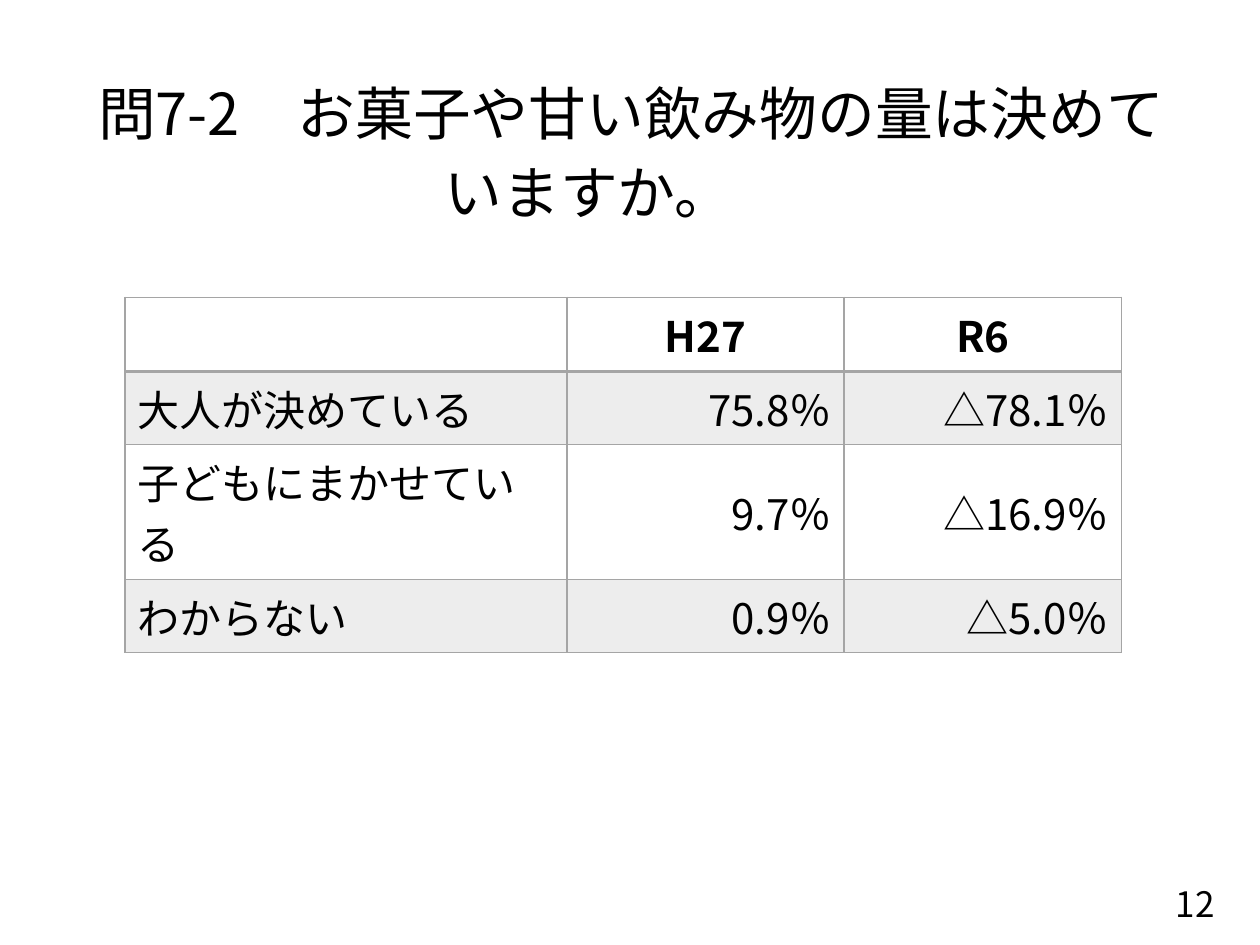
import pptx
import pptx.util
import pptx.dml.color
import pptx.enum.text
import pptx.oxml.ns
import lxml.etree

Inches = pptx.util.Inches
Pt = pptx.util.Pt
ALIGN = pptx.enum.text.PP_ALIGN
MIDDLE = pptx.enum.text.MSO_ANCHOR.MIDDLE
qn = pptx.oxml.ns.qn
BLACK = pptx.dml.color.RGBColor(0x00, 0x00, 0x00)
GRAY = pptx.dml.color.RGBColor(0xA5, 0xA5, 0xA5)
FONT = "Noto Sans CJK JP"


def write(frame, text, size=24, bold=False, align=ALIGN.LEFT):
    frame.word_wrap = True
    paragraph = frame.paragraphs[0]
    paragraph.text = text
    paragraph.alignment = align
    for run in paragraph.runs:
        run.font.name = FONT
        run.font.size = Pt(size)
        run.font.bold = bold
        run.font.color.rgb = BLACK
        east_asian = lxml.etree.SubElement(run.font._element, qn("a:ea"))
        east_asian.set("typeface", FONT)
    return paragraph


def draw_borders(cell, widths):
    properties = cell._tc.get_or_add_tcPr()
    for side, width in zip("LRTB", widths):
        line = lxml.etree.SubElement(properties, qn(f"a:ln{side}"), w=str(Pt(width)))
        fill = lxml.etree.SubElement(line, qn("a:solidFill"))
        lxml.etree.SubElement(fill, qn("a:srgbClr"), val=str(GRAY))


deck = pptx.Presentation()
deck.slide_width = Inches(10)
deck.slide_height = Inches(7.5)
slide = deck.slides.add_slide(deck.slide_layouts[6])

page_number = slide.shapes.add_textbox(Inches(7.49), Inches(6.97), Inches(2.25), Inches(0.4))
page_number.text_frame.vertical_anchor = MIDDLE
write(page_number.text_frame, "12", size=20, align=ALIGN.RIGHT)

question = slide.shapes.add_textbox(Inches(0.22), Inches(0.44), Inches(10.11), Inches(1.45))
question.text_frame.vertical_anchor = MIDDLE
heading = write(question.text_frame, "問7-2　お菓子や甘い飲み物の量は決めて\vいますか。", size=33)
heading.line_spacing = Pt(45)
heading_format = heading._p.get_or_add_pPr()
heading_format.set("marL", str(Inches(3.21)))
heading_format.set("indent", str(Inches(-2.75)))

answers = [
    ("", "H27", "R6"),
    ("大人が決めている", "75.8％", "△78.1％"),
    ("子どもにまかせている", "9.7％", "△16.9％"),
    ("わからない", "0.9％", "△5.0％"),
]
row_heights = (0.59, 0.58, 1.07, 0.58)
column_widths = (3.51, 2.2, 2.2)
results = slide.shapes.add_table(
    4, 3, Inches(0.99), Inches(2.36), Inches(sum(column_widths)), Inches(sum(row_heights))
).table
results.first_row = False
results.horz_banding = False
for column, width in zip(results.columns, column_widths):
    column.width = Inches(width)

for row, answer in enumerate(answers):
    results.rows[row].height = Inches(row_heights[row])
    for col, text in enumerate(answer):
        cell = results.cell(row, col)
        cell.vertical_anchor = MIDDLE
        header = row == 0
        align = ALIGN.CENTER if header else ALIGN.RIGHT if col else ALIGN.LEFT
        write(cell.text_frame, text, bold=header, align=align)
        draw_borders(cell, (1, 1, 2 if row == 1 else 1, 2 if header else 1))
        if row % 2:
            cell.fill.solid()
            cell.fill.fore_color.rgb = GRAY
            shade = cell._tc.tcPr.find(qn("a:solidFill")).find(qn("a:srgbClr"))
            lxml.etree.SubElement(shade, qn("a:alpha"), val="20000")
        else:
            cell.fill.background()

deck.save("out.pptx")
